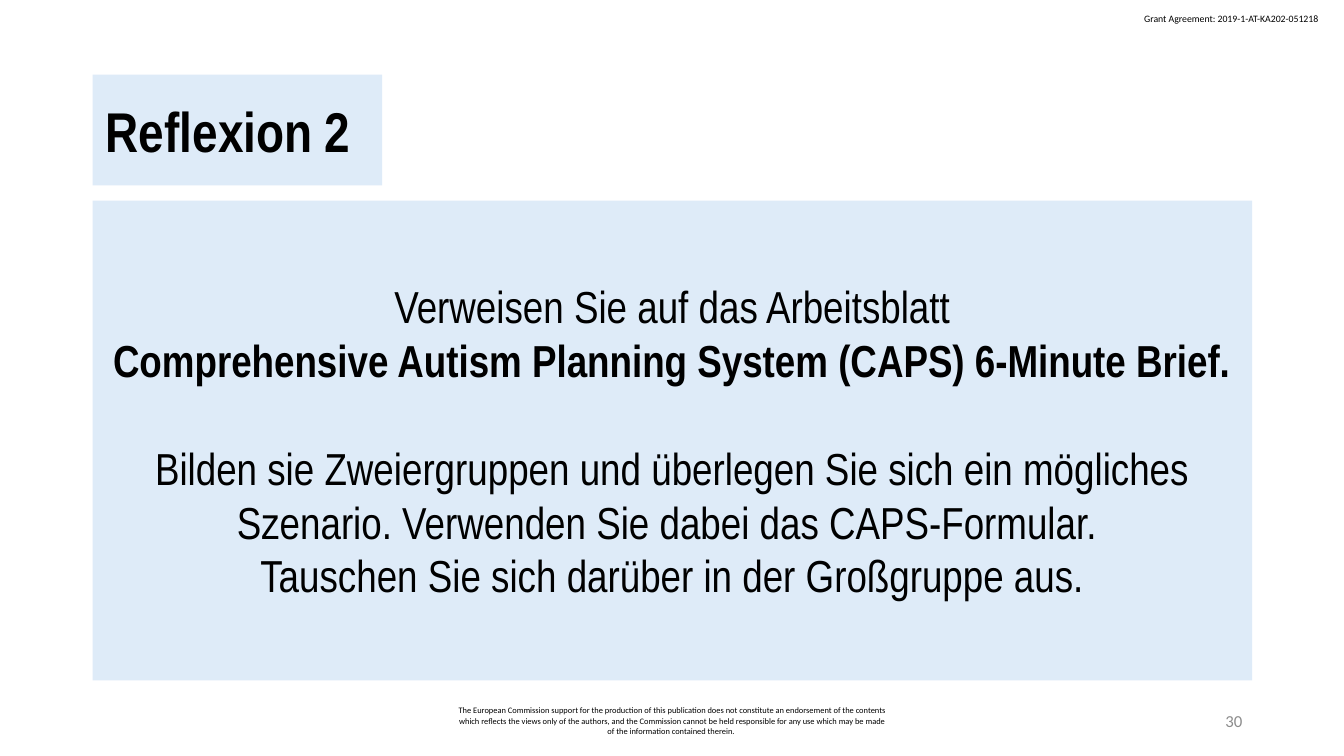
import pptx
import pptx.dml.color
import pptx.enum.shapes
import pptx.enum.text
import pptx.util

Inches, Pt = pptx.util.Inches, pptx.util.Pt
ALIGN = pptx.enum.text.PP_ALIGN
MIDDLE = pptx.enum.text.MSO_ANCHOR.MIDDLE
TOP = pptx.enum.text.MSO_ANCHOR.TOP

COLORS = {"panel": "DEEBF8", "text": "000000", "number": "8C8C8C"}

# Content: each paragraph is (text, bold, space before in points)
TITLE = [("Reflexion 2", True, 0)]
TASK = [
    ("Verweisen Sie auf das Arbeitsblatt", False, 0),
    ("Comprehensive Autism Planning System (CAPS) 6-Minute Brief.", True, 0),
    ("Bilden sie Zweiergruppen und überlegen Sie sich ein mögliches Szenario. "
     "Verwenden Sie dabei das CAPS-Formular. ", False, 38.5),
    ("Tauschen Sie sich darüber in der Großgruppe aus.", False, 0),
]
GRANT = [("Grant Agreement: 2019-1-AT-KA202-051218", False, 0)]
DISCLAIMER = [
    ("The European Commission support for the production of this publication does "
     "not constitute an endorsement of the contents which reflects the views only of "
     "the authors, and the Commission cannot be held responsible for any use which "
     "may be made of the information contained therein. ", False, 0),
]
PAGE_NUMBER = [("30", False, 0)]

# Grid in inches
WIDTH, HEIGHT = 13.33, 7.5
MARGIN = 0.92
CONTENT_W = 11.5
TITLE_TOP, TITLE_W, TITLE_H = 0.74, 2.87, 1.1
TASK_TOP = TITLE_TOP + TITLE_H + 0.15
TASK_H = 4.76
FOOTER_TOP, FOOTER_H = 6.95, 0.4
DISCLAIMER_W, NUMBER_W = 4.5, 3

presentation = pptx.Presentation()
presentation.slide_width, presentation.slide_height = Inches(WIDTH), Inches(HEIGHT)
slide = presentation.slides.add_slide(presentation.slide_layouts[6])


def color(name):
    return pptx.dml.color.RGBColor.from_string(COLORS[name])


def write(frame, paragraphs, size, font, align, anchor=MIDDLE, ink="text", wrap=True):
    frame.word_wrap = wrap
    frame.vertical_anchor = anchor
    frame.text = "\n".join(text for text, _, _ in paragraphs)
    for paragraph, (_, bold, before) in zip(frame.paragraphs, paragraphs):
        paragraph.alignment = align
        if before:
            paragraph.space_before = Pt(before)
        for run in paragraph.runs:
            run.font.name = font
            run.font.size = Pt(size)
            run.font.bold = bold
            run.font.color.rgb = color(ink)


def add_note(box, *style, **options):
    note = slide.shapes.add_textbox(*map(Inches, box))
    write(note.text_frame, *style, **options)


def add_panel(box, *style):
    panel = slide.shapes.add_shape(
        pptx.enum.shapes.MSO_SHAPE.RECTANGLE, *map(Inches, box))
    panel.shadow.inherit = False
    panel.fill.solid()
    panel.fill.fore_color.rgb = color("panel")
    panel.line.fill.background()
    frame = panel.text_frame
    frame.margin_left = frame.margin_right = Inches(0.13)
    frame.margin_top = frame.margin_bottom = Inches(0.07)
    write(frame, *style)


# Header and footer
add_note((11.25, 0.08, 1.97, 0.22), GRANT, 7, "Calibri", ALIGN.LEFT,
         anchor=TOP, wrap=False)
add_note(((WIDTH - DISCLAIMER_W) / 2, FOOTER_TOP, DISCLAIMER_W, FOOTER_H),
         DISCLAIMER, 6, "Calibri", ALIGN.CENTER)
add_note((MARGIN + CONTENT_W - NUMBER_W, FOOTER_TOP, NUMBER_W, FOOTER_H),
         PAGE_NUMBER, 12, "Calibri", ALIGN.RIGHT, ink="number")

# Title and task panels
add_panel((MARGIN, TITLE_TOP, TITLE_W, TITLE_H), TITLE, 40, "Arial Narrow", ALIGN.LEFT)
add_panel((MARGIN, TASK_TOP, CONTENT_W, TASK_H), TASK, 32, "Arial Narrow", ALIGN.CENTER)

presentation.save("out.pptx")
